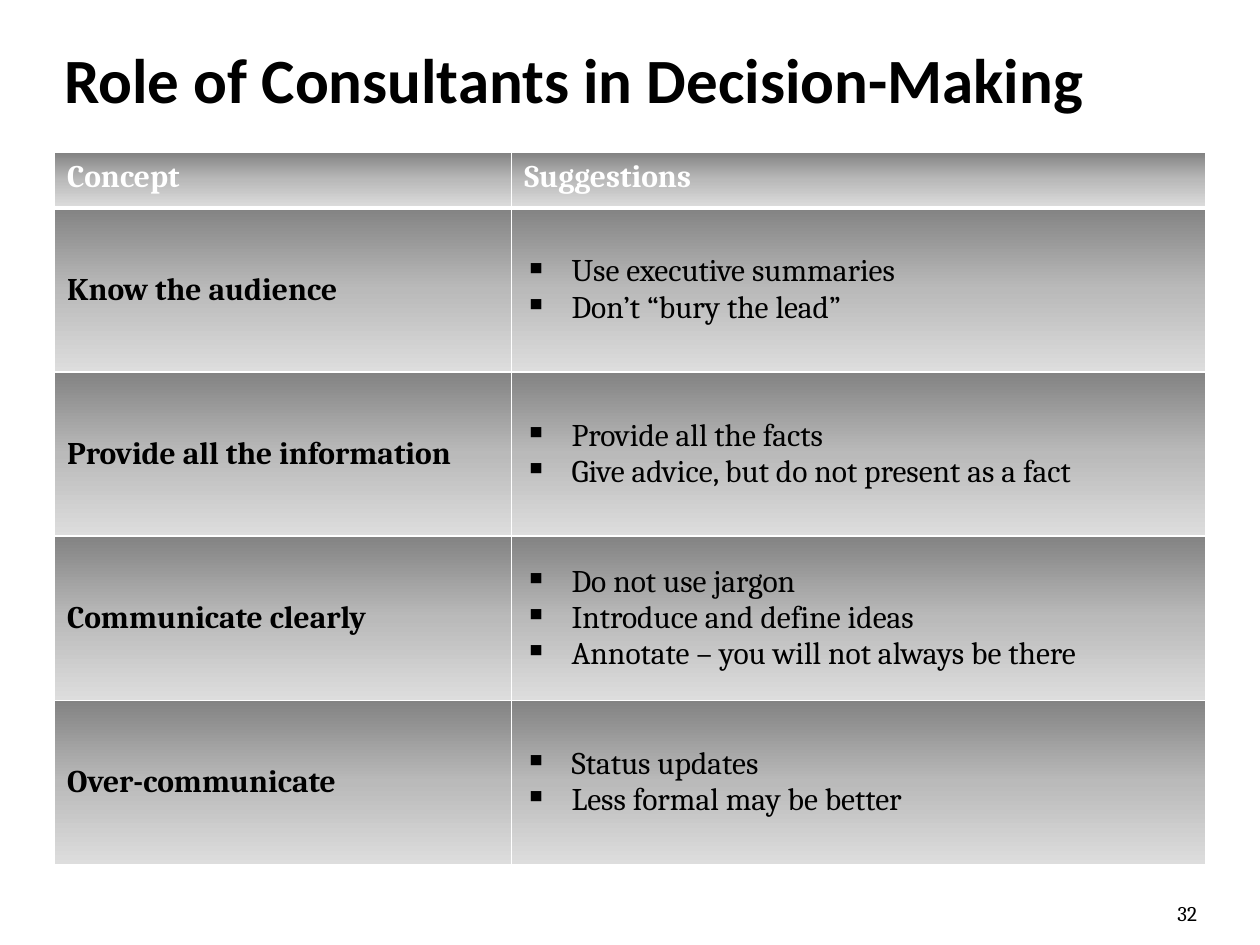
from dataclasses import dataclass

from lxml.etree import SubElement
from pptx import Presentation
from pptx.dml.color import RGBColor
from pptx.enum.text import MSO_ANCHOR as Anchor, MSO_AUTO_SIZE as AutoSize, PP_ALIGN as Align
from pptx.oxml.ns import qn
from pptx.util import Pt


@dataclass(frozen=True)
class Theme:
    heading_font: str = "Calibri"
    body_font: str = "Cambria"
    title_size: int = 36
    table_size: int = 18
    number_size: int = 12
    dark: str = "000000"
    light: str = "FFFFFF"
    gradient: tuple = ((0, "838383"), (50, "BABABA"), (100, "DDDDDD"))
    thin: int = 1
    thick: int = 3


THEME = Theme()
HEADINGS = ("Concept", "Suggestions")
CONCEPTS = (
    ("Know the audience", ("Use executive summaries", "Don’t “bury the lead”")),
    ("Provide all the information",
     ("Provide all the facts", "Give advice, but do not present as a fact")),
    ("Communicate clearly",
     ("Do not use jargon", "Introduce and define ideas",
      "Annotate – you will not always be there")),
    ("Over-communicate", ("Status updates", "Less formal may be better")),
)
COLUMN_WIDTHS = (261.2, 396.4)
HEADER_HEIGHT = 31.6
BULLET_INDENT = 27


def add_run(paragraph, text, font, size, color, bold=False):
    run = paragraph.add_run()
    run.text = text
    run.font.name = font
    run.font.size = Pt(size)
    run.font.bold = bold
    run.font.color.rgb = RGBColor.from_string(color)


def set_frame(frame, anchor, top_inset=0):
    frame.word_wrap = True
    frame.auto_size = AutoSize.NONE
    frame.vertical_anchor = anchor
    frame.margin_left = frame.margin_right = frame.margin_bottom = 0
    frame.margin_top = Pt(top_inset)


def place_title(title, left, top, width, height):
    title.left, title.top, title.width, title.height = map(Pt, (left, top, width, height))
    set_frame(title.text_frame, Anchor.BOTTOM, 3.6)
    paragraph = title.text_frame.paragraphs[0]
    paragraph.alignment = Align.LEFT
    add_run(paragraph, "Role of Consultants in Decision-Making",
            THEME.heading_font, THEME.title_size, THEME.dark, True)


def add_page_number(slide, left, top, width, height):
    box = slide.shapes.add_textbox(*map(Pt, (left, top, width, height)))
    set_frame(box.text_frame, Anchor.BOTTOM)
    paragraph = box.text_frame.paragraphs[0]
    paragraph.alignment = Align.RIGHT
    add_run(paragraph, "32", THEME.body_font, THEME.number_size, THEME.dark)


def style_cell(cell, top_width, bottom_width):
    properties = cell._tc.get_or_add_tcPr()
    widths = {"a:lnL": THEME.thin, "a:lnR": THEME.thin, "a:lnT": top_width, "a:lnB": bottom_width}
    for tag, width in widths.items():
        line = SubElement(properties, qn(tag), w=str(Pt(width)))
        fill = SubElement(line, qn("a:solidFill"))
        SubElement(fill, qn("a:srgbClr"), val=THEME.light)
    gradient = SubElement(properties, qn("a:gradFill"), rotWithShape="1")
    stops = SubElement(gradient, qn("a:gsLst"))
    for percent, color in THEME.gradient:
        stop = SubElement(stops, qn("a:gs"), pos=str(percent * 1000))
        SubElement(stop, qn("a:srgbClr"), val=color)
    SubElement(gradient, qn("a:lin"), ang="5400000", scaled="0")


def add_bullet(paragraph):
    properties = paragraph._p.get_or_add_pPr()
    properties.set("marL", str(Pt(BULLET_INDENT)))
    properties.set("indent", str(-Pt(BULLET_INDENT)))
    SubElement(properties, qn("a:buChar"), char="▪")


def fill_cell(cell, lines, color, bold, bulleted=False):
    frame = cell.text_frame
    for index, text in enumerate(lines):
        paragraph = frame.add_paragraph() if index else frame.paragraphs[0]
        if bulleted:
            add_bullet(paragraph)
        add_run(paragraph, text, THEME.body_font, THEME.table_size, color, bold)


def add_concept_table(slide, left, top, width, height):
    table = slide.shapes.add_table(len(CONCEPTS) + 1, len(HEADINGS),
                                   *map(Pt, (left, top, width, height))).table
    for column, column_width in zip(table.columns, COLUMN_WIDTHS):
        column.width = Pt(column_width)
    row_height = (height - HEADER_HEIGHT) / len(CONCEPTS)
    for index, row in enumerate(table.rows):
        row.height = Pt(row_height if index else HEADER_HEIGHT)
        for cell in row.cells:
            style_cell(cell, THEME.thick if index == 1 else THEME.thin,
                       THEME.thin if index else THEME.thick)
            cell.vertical_anchor = Anchor.MIDDLE if index else Anchor.TOP
    for column, heading in enumerate(HEADINGS):
        fill_cell(table.cell(0, column), [heading], THEME.light, True)
    for row, (concept, suggestions) in enumerate(CONCEPTS, start=1):
        fill_cell(table.cell(row, 0), [concept], THEME.dark, True)
        fill_cell(table.cell(row, 1), suggestions, THEME.dark, False, bulleted=True)


def main():
    presentation = Presentation()
    presentation.slide_width, presentation.slide_height = Pt(720), Pt(540)
    slide = presentation.slides.add_slide(presentation.slide_layouts[5])
    place_title(slide.shapes.title, 36.7, 0, 648, 66.2)
    add_page_number(slide, 624.2, 500.4, 59.8, 28.8)
    add_concept_table(slide, 31.2, 87.2, sum(COLUMN_WIDTHS), 406.8)
    presentation.save("out.pptx")


if __name__ == "__main__":
    main()
